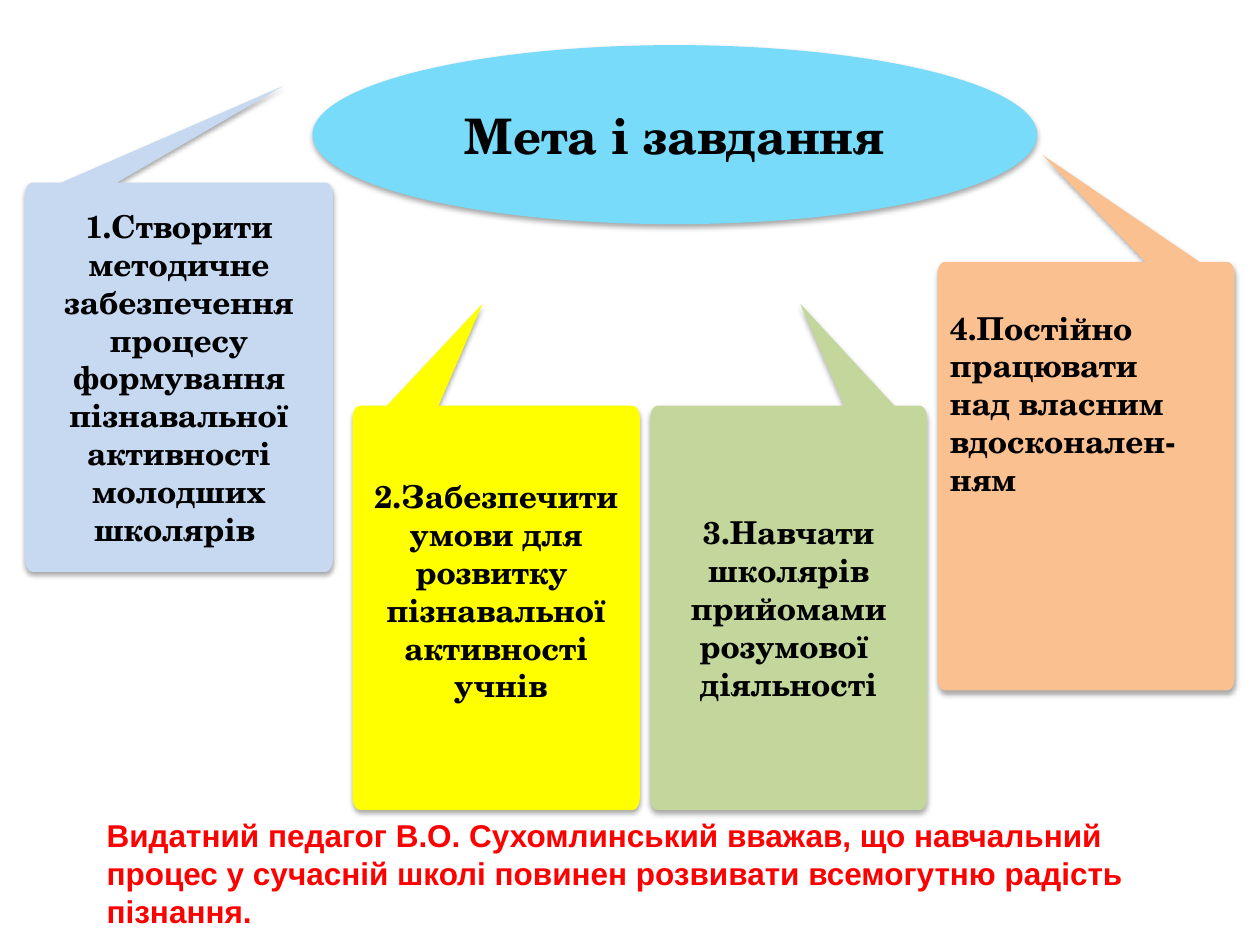
import math
from dataclasses import dataclass

import lxml.etree
import pptx
import pptx.dml.color
import pptx.enum.shapes
import pptx.enum.text
import pptx.oxml
import pptx.oxml.ns
import pptx.util

Cm = pptx.util.Cm
Align = pptx.enum.text.PP_ALIGN
Anchor = pptx.enum.text.MSO_ANCHOR

COLOURS = {
    "sky": "78DBFA",
    "pale_blue": "C6D9F1",
    "yellow": "FFFF00",
    "green": "C3D69B",
    "orange": "FAC090",
    "black": "000000",
    "red": "FF0000",
}
SERIF = "TeX Gyre Schola"
CORNER_WIDTH, CORNER_HEIGHT = 0.15, 0.25
SIDE_INSET, EDGE_INSET = 0.25, 0.13


@dataclass
class Callout:
    """Task card with a pointer rising from its top edge, lengths in cm."""

    left: float
    top: float
    right: float
    bottom: float
    tip: tuple[float, float]
    base: tuple[float, float]
    colour: str
    lines: list[str]
    align: Align = Align.CENTER
    anchor: Anchor = Anchor.MIDDLE
    space_above: float = 0
    space_below: float = 0


TASKS = [
    Callout(18.9, 5.28, 24.89, 13.92, (21.01, 3.12), (23.09, 24.18), "orange",
            ["4.Постійно працювати", "над власним", "вдосконален-", "ням"],
            align=Align.LEFT, anchor=Anchor.TOP, space_above=0.81),
    Callout(7.11, 8.18, 12.9, 16.33, (9.73, 6.12), (7.8, 8.84), "yellow",
            ["2.Забезпечити умови для розвитку ", "пізнавальної активності", " учнів"],
            space_below=0.69),
    Callout(13.11, 8.18, 18.69, 16.33, (16.13, 6.12), (17.02, 18.03), "green",
            ["3.Навчати школярів", "прийомами", "розумової ", "діяльності"]),
    Callout(0.51, 3.68, 6.71, 11.53, (5.72, 1.73), (1.24, 2.36), "pale_blue",
            ["1.Створити методичне забезпечення", "процесу формування пізнавальної",
             "активності молодших школярів "]),
]


def rgb(colour: str) -> pptx.dml.color.RGBColor:
    """Look up a named colour."""
    return pptx.dml.color.RGBColor.from_string(COLOURS[colour])


def paint(shape, colour: str) -> None:
    """Fill a shape without outline and give it a soft shadow below."""
    shape.fill.solid()
    shape.fill.fore_color.rgb = rgb(colour)
    shape.line.fill.background()
    shape.shadow.inherit = False
    effects = shape.element.spPr.find(pptx.oxml.ns.qn("a:effectLst"))
    effects.append(pptx.oxml.parse_xml(
        f'<a:outerShdw {pptx.oxml.ns.nsdecls("a")} blurRad="{pptx.util.Pt(3.1)}" '
        f'dist="{pptx.util.Pt(1.8)}" dir="5400000" rotWithShape="0">'
        '<a:srgbClr val="000000"><a:alpha val="35000"/></a:srgbClr></a:outerShdw>'
    ))


def write(frame, lines: list[str], font: str, size: int, colour: str, align: Align) -> None:
    """Write bold paragraphs in one style."""
    frame.text = "\n".join(lines)
    for paragraph in frame.paragraphs:
        paragraph.alignment = align
        for run in paragraph.runs:
            run.font.name = font
            run.font.size = pptx.util.Pt(size)
            run.font.bold = True
            run.font.color.rgb = rgb(colour)


def corner(x: float, y: float, start: int) -> list[tuple[float, float]]:
    """Return points of a clockwise quarter ellipse around a centre."""
    angles = [math.radians(start + step) for step in range(0, 91, 15)]
    return [(x + CORNER_WIDTH * math.cos(a), y + CORNER_HEIGHT * math.sin(a)) for a in angles]


def draw_callout(slide, task: Callout) -> None:
    """Draw a task card and its text."""
    west, east = task.left + CORNER_WIDTH, task.right - CORNER_WIDTH
    north, south = task.top + CORNER_HEIGHT, task.bottom - CORNER_HEIGHT
    outline = [
        *corner(west, north, 180),
        (task.base[0], task.top), task.tip, (task.base[1], task.top),
        *corner(east, north, 270),
        *corner(east, south, 0),
        *corner(west, south, 90),
    ]
    points = [(Cm(x), Cm(y)) for x, y in outline]
    builder = slide.shapes.build_freeform(*points[0])
    builder.add_line_segments(points[1:], close=True)
    card = builder.convert_to_shape()
    paint(card, task.colour)
    frame = card.text_frame
    frame.word_wrap = True
    frame.vertical_anchor = task.anchor
    frame.margin_left = frame.margin_right = Cm(SIDE_INSET)
    frame.margin_top = Cm(task.top - task.tip[1] + EDGE_INSET + task.space_above)
    frame.margin_bottom = Cm(EDGE_INSET + task.space_below)
    write(frame, task.lines, SERIF, 18, "black", task.align)


def main() -> None:
    """Build the slide of goals and tasks."""
    deck = pptx.Presentation()
    deck.slide_width, deck.slide_height = Cm(25.4), Cm(19.05)
    slide = deck.slides.add_slide(deck.slide_layouts[6])

    heading = slide.shapes.add_shape(
        pptx.enum.shapes.MSO_SHAPE.OVAL, Cm(6.3), Cm(0.91), Cm(14.61), Cm(3.61))
    paint(heading, "sky")
    heading.text_frame.word_wrap = False
    heading.text_frame.vertical_anchor = Anchor.MIDDLE
    write(heading.text_frame, ["Мета і завдання"], SERIF, 28, "black", Align.CENTER)

    for task in TASKS:
        draw_callout(slide, task)

    conclusion = slide.shapes.add_textbox(Cm(1.9), Cm(16.33), Cm(21), Cm(2.57))
    conclusion.text_frame.word_wrap = True
    write(conclusion.text_frame,
          ["Видатний педагог В.О. Сухомлинський вважав, що навчальний процес у сучасній "
           "школі повинен розвивати всемогутню радість пізнання."],
          "Arial", 18, "red", Align.LEFT)

    deck.save("out.pptx")


if __name__ == "__main__":
    main()
